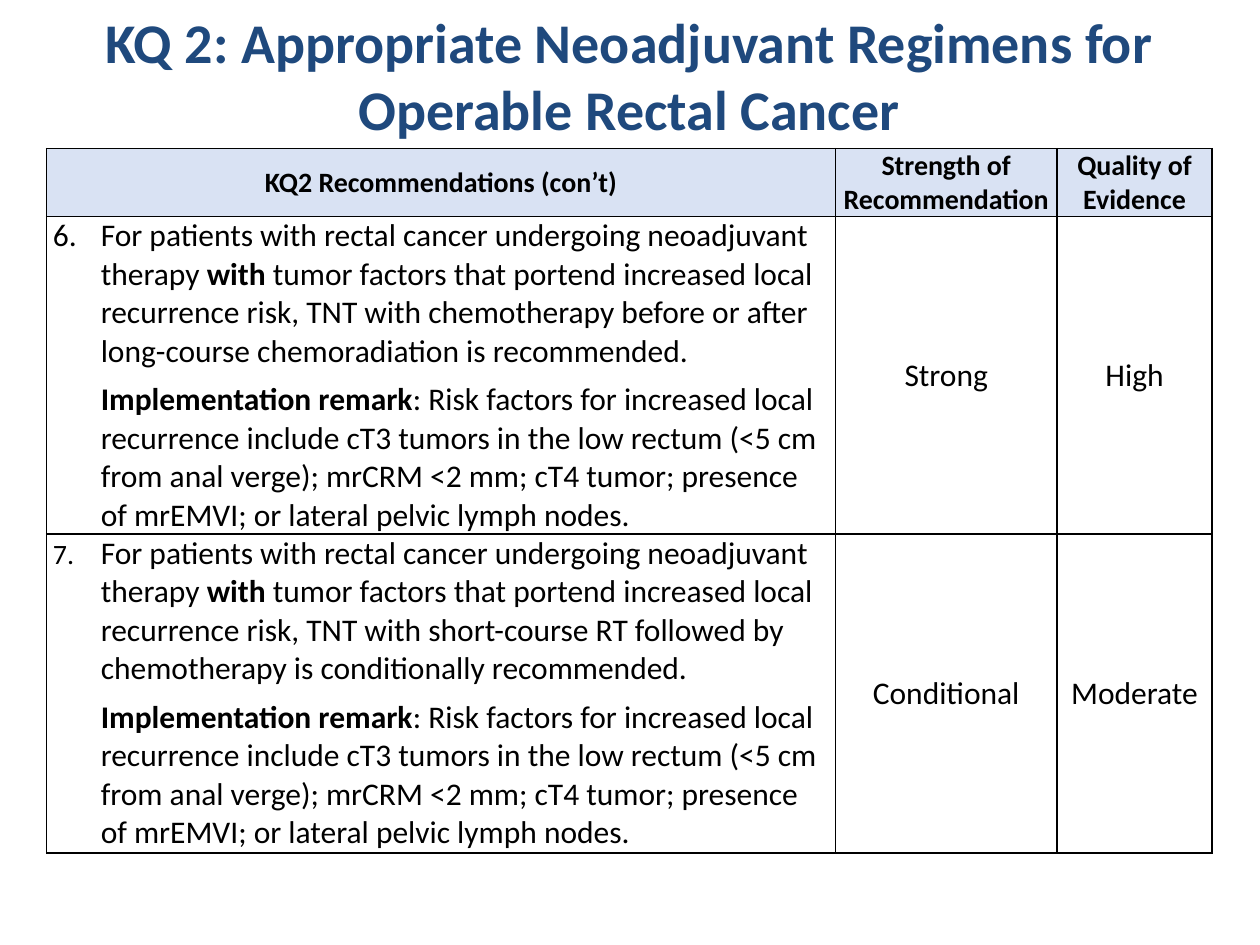
"""Build the slide of key question 2 recommendations for operable rectal cancer."""
from lxml.etree import SubElement
from pptx import Presentation
from pptx.dml.color import RGBColor
from pptx.enum.text import MSO_ANCHOR, PP_ALIGN
from pptx.oxml.ns import qn
from pptx.util import Inches, Pt

COLORS = {"title": "1F497D", "header": "D9E2F3", "text": "000000", "border": "000000"}
COLUMNS = [6.26, 1.76, 1.23]
ROWS = [0.54, 2.52, 2.53]
LEFT, TOP = 0.37, 1.18
INDENT = 0.38

OPENING = "For patients with rectal cancer undergoing neoadjuvant therapy "
FACTORS = " tumor factors that portend increased local recurrence risk, TNT with "
RISKS = (": Risk factors for increased local recurrence include cT3 tumors in the low rectum "
         "(<5 cm from anal verge); mrCRM <2 mm; cT4 tumor; presence of mrEMVI; "
         "or lateral pelvic lymph nodes.")
HEADERS = ["KQ2 Recommendations (con’t)", "Strength of Recommendation", "Quality of Evidence"]
RECOMMENDATIONS = [
    (6, 100, "chemotherapy before or after long-course chemoradiation is recommended.",
     "Strong", "High"),
    (7, 89, "short-course RT followed by chemotherapy is conditionally recommended.",
     "Conditional", "Moderate"),
]


def add_run(paragraph, text, size, bold=False, color="text"):
    run = paragraph.add_run()
    run.text = text
    run.font.name = "Calibri"
    run.font.size = Pt(size)
    run.font.bold = bold
    run.font.color.rgb = RGBColor.from_string(COLORS[color])


def format_cell(cell, fill=None):
    cell.margin_left = cell.margin_right = Inches(0.05)
    cell.margin_top = cell.margin_bottom = 0
    properties = cell._tc.get_or_add_tcPr()
    for side in ("a:lnL", "a:lnR", "a:lnT", "a:lnB"):
        line = SubElement(properties, qn(side), w=str(Pt(1)))
        solid = SubElement(line, qn("a:solidFill"))
        SubElement(solid, qn("a:srgbClr"), val=COLORS["border"])
    if fill:
        cell.fill.solid()
        cell.fill.fore_color.rgb = RGBColor.from_string(COLORS[fill])
    else:
        cell.fill.background()


presentation = Presentation()
presentation.slide_width, presentation.slide_height = Inches(10), Inches(7.5)
slide = presentation.slides.add_slide(presentation.slide_layouts[6])

title = slide.shapes.add_textbox(Inches(LEFT), 0, Inches(sum(COLUMNS)), Inches(TOP))
title.text_frame.word_wrap = True
title.text_frame.vertical_anchor = MSO_ANCHOR.MIDDLE
paragraph = title.text_frame.paragraphs[0]
paragraph.alignment = PP_ALIGN.CENTER
add_run(paragraph, "KQ 2: Appropriate Neoadjuvant Regimens for Operable Rectal Cancer",
        32, True, "title")

table = slide.shapes.add_table(len(ROWS), len(COLUMNS), Inches(LEFT), Inches(TOP),
                               Inches(sum(COLUMNS)), Inches(sum(ROWS))).table
table.horz_banding = False
for column, width in zip(table.columns, COLUMNS):
    column.width = Inches(width)
for row, height in zip(table.rows, ROWS):
    row.height = Inches(height)

centred = [(0, index, text) for index, text in enumerate(HEADERS)]
for row_index, (number, number_size, treatment, strength, quality) in enumerate(RECOMMENDATIONS, 1):
    centred += [(row_index, 1, strength), (row_index, 2, quality)]
    cell = table.cell(row_index, 0)
    format_cell(cell)

    advice = cell.text_frame.paragraphs[0]
    properties = advice._p.get_or_add_pPr()
    properties.set("marL", str(Inches(INDENT)))
    properties.set("indent", str(-Inches(INDENT)))
    SubElement(properties, qn("a:buSzPct"), val=str(number_size * 1000))
    SubElement(properties, qn("a:buFont"), typeface="Calibri")
    SubElement(properties, qn("a:buAutoNum"), type="arabicPeriod", startAt=str(number))
    add_run(advice, OPENING, 18)
    add_run(advice, "with", 18, True)
    add_run(advice, FACTORS + treatment, 18)

    remark = cell.text_frame.add_paragraph()
    remark.space_before = Pt(6)
    remark._p.get_or_add_pPr().set("marL", str(Inches(INDENT)))
    add_run(remark, "Implementation remark", 18, True)
    add_run(remark, RISKS, 18)

for row_index, column_index, text in centred:
    is_header = row_index == 0
    cell = table.cell(row_index, column_index)
    format_cell(cell, "header" if is_header else None)
    cell.vertical_anchor = MSO_ANCHOR.MIDDLE
    paragraph = cell.text_frame.paragraphs[0]
    paragraph.alignment = PP_ALIGN.CENTER
    add_run(paragraph, text, 16 if is_header else 18, is_header)

presentation.save("out.pptx")
